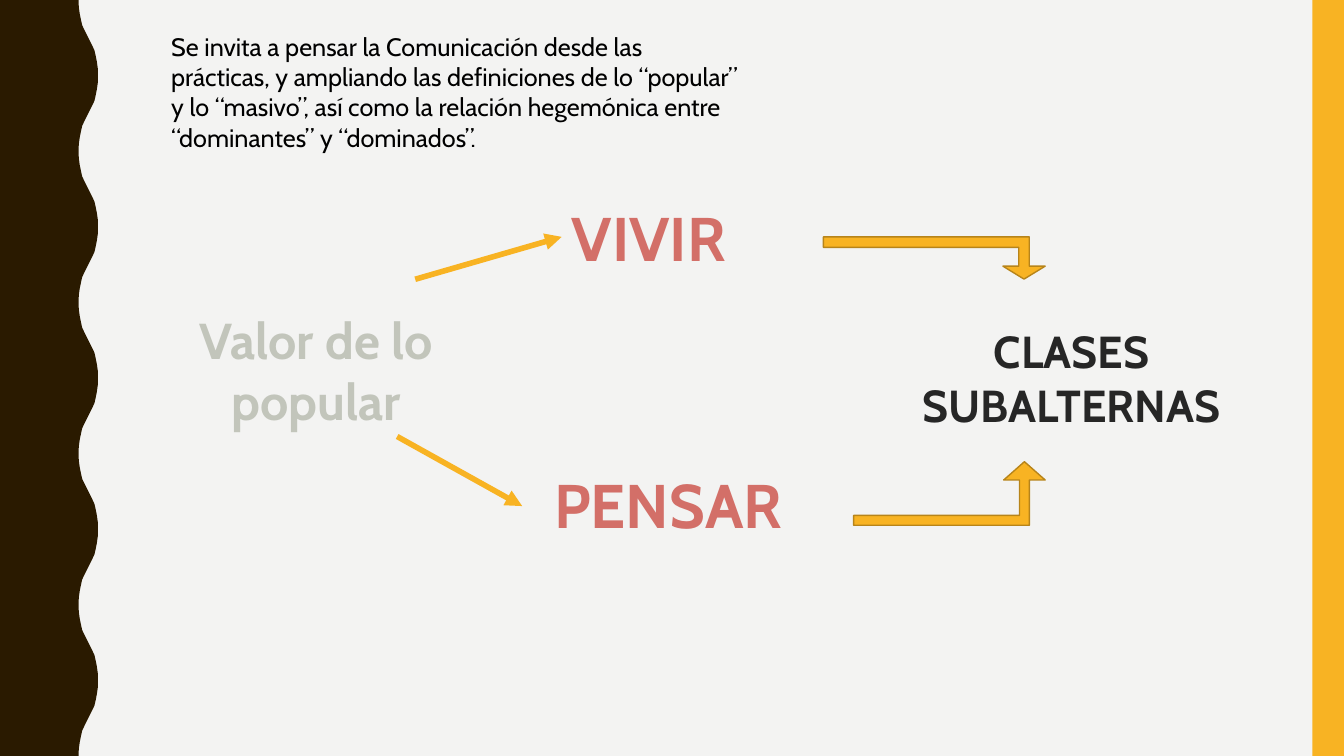
from lxml import etree
from pptx import Presentation
from pptx import util as u
from pptx.dml.color import RGBColor
from pptx.enum import shapes, text
from pptx.oxml import ns

FONT = "Cabin"
AMBER, BROWN, CORAL = "F8B323", "2A1A00", "D36F68"
WIDTH, HEIGHT = 960, 540


def color(hex_code):
    """Turn a hex string into a colour."""
    return RGBColor.from_string(hex_code)


def points(*lengths):
    """Turn lengths in points into slide units."""
    return [u.Pt(length) for length in lengths]


def paint(shape, fill, outline=None):
    """Give a shape a flat fill and an optional thin outline."""
    shape.shadow.inherit = False
    shape.fill.solid()
    shape.fill.fore_color.rgb = color(fill)
    if outline:
        shape.line.color.rgb = color(outline)
        shape.line.width = u.Pt(1)
    else:
        shape.line.fill.background()


def add_text(slide, wording, box, size, hex_code, bold=True, align=text.PP_ALIGN.LEFT):
    """Write one wrapped paragraph in a box."""
    frame = slide.shapes.add_textbox(*points(*box)).text_frame
    frame.word_wrap = True
    frame.auto_size = text.MSO_AUTO_SIZE.SHAPE_TO_FIT_TEXT
    paragraph = frame.paragraphs[0]
    paragraph.alignment = align
    run = paragraph.add_run()
    run.text = wording
    run.font.name = FONT
    run.font.size = u.Pt(size)
    run.font.bold = bold
    run.font.color.rgb = color(hex_code)


def add_wavy_edge(slide, box, waves=5):
    """Draw the dark band whose right side repeats one wave down the box."""
    left, top, width, height = box
    period = height / waves
    trough = [(13.8, 0), (13.7, 5), (13, 10), (12.1, 14.4),
              (11.3, 18), (9.9, 21), (8.4, 24), (6.9, 27)]
    swing = trough[0][0]
    outward = trough + [(swing - inset, period / 2 - y) for inset, y in trough[-2::-1]]
    wave = outward + [(inset, period - y) for inset, y in outward[-2::-1]]
    edge = [(left + width - inset, top + index * period + y)
            for index in range(waves) for inset, y in wave]
    outline = edge + [(left, top + height)]
    builder = slide.shapes.build_freeform(*points(left, top))
    builder.add_line_segments([points(*corner) for corner in outline], close=True)
    paint(builder.convert_to_shape(), BROWN)


def add_side_bar(slide, box):
    """Draw the amber bar on the right."""
    bar = slide.shapes.add_shape(shapes.MSO_SHAPE.RECTANGLE, *points(*box))
    paint(bar, AMBER)


def add_branch(slide, start, end):
    """Draw a straight arrow from the value to one of its forms."""
    branch = slide.shapes.add_connector(shapes.MSO_CONNECTOR.STRAIGHT, *points(*start, *end))
    branch.line.color.rgb = color(AMBER)
    branch.line.width = u.Pt(4)
    etree.SubElement(branch.line._get_or_add_ln(), ns.qn("a:tailEnd"), type="triangle")
    etree.SubElement(branch.element.spPr, ns.qn("a:effectLst"))


def add_bent_arrow(slide, box, adjustments, downward=False):
    """Draw a bent arrow that leads to the classes."""
    arrow = slide.shapes.add_shape(shapes.MSO_SHAPE.BENT_UP_ARROW, *points(*box))
    for index, value in enumerate(adjustments):
        arrow.adjustments[index] = value
    if downward:
        arrow.element.spPr.get_or_add_xfrm().set("flipV", "1")
    paint(arrow, AMBER, "B7841A")


def add_diagram(slide, box):
    """Lay out the value, its two forms and the classes inside the box."""
    left, top, width, height = box
    center = text.PP_ALIGN.CENTER
    add_text(slide, "Valor de lo popular", (left, top + 78.5, 221, 94.3), 36, "C2C5BB", align=center)
    add_text(slide, "VIVIR", (left + 286, top, 338.4, 60.5), 44, CORAL)
    add_text(slide, "PENSAR", (left + 273.6, top + 190.8, 255.6, 60.5), 44, CORAL)
    add_text(slide, "CLASES SUBALTERNAS", (left + width - 311, top + 88.5, 311, 85),
             32, "262626", align=center)
    add_branch(slide, (left + 181.4, top + 60.5), (left + 286, top + 30.2))
    add_branch(slide, (left + 168.5, top + 172.8), (left + 257.8, top + 222.5))
    bend_right = left + 631.4
    add_bent_arrow(slide, (bend_right - 158.4, top + 30.2, 158.4, 30.2),
                   (0.25, 0.5, 0.307), downward=True)
    add_bent_arrow(slide, (bend_right - 136.8, top + 190.8, 136.8, 45.4),
                   (0.156, 0.326, 0.288))


def main():
    """Build and save the slide."""
    deck = Presentation()
    deck.slide_width, deck.slide_height = points(WIDTH, HEIGHT)
    slide = deck.slides.add_slide(deck.slide_layouts[6])
    slide.background.fill.solid()
    slide.background.fill.fore_color.rgb = color("F3F3F2")
    add_wavy_edge(slide, (0, 0, 70, HEIGHT))
    add_side_bar(slide, (937.5, 0, 22.5, HEIGHT))
    add_diagram(slide, (115.2, 139, 805.7, 251.3))
    add_text(slide, "Se invita a pensar la Comunicación desde las prácticas, y ampliando las "
             "definiciones de lo “popular” y lo “masivo”, así como la relación hegemónica "
             "entre “dominantes” y “dominados”.", (115.2, 18.7, 424, 94.3), 18, "000000", bold=False)
    deck.save("out.pptx")


if __name__ == "__main__":
    main()
